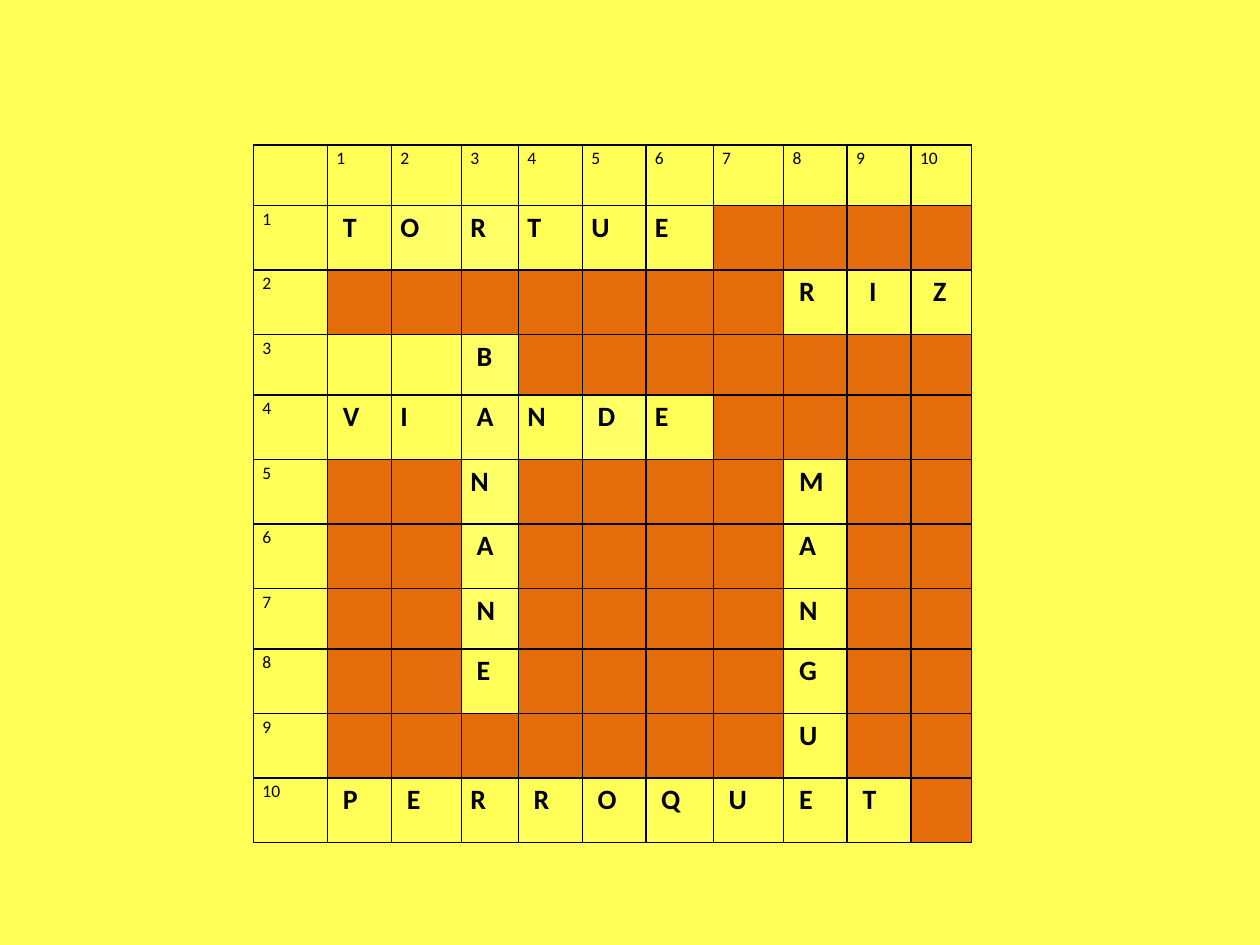
from lxml import etree
from pptx import Presentation
from pptx.dml.color import RGBColor
from pptx.oxml import ns
from pptx.util import Cm, Pt

THEME = {
    "page": "FFFF57", "highlight": "FFFF66", "blocked": "E46C0A", "ink": "000000",
    "font": "Calibri", "number size": 10, "letter size": 16, "border": 1,
}

# Crossword: "#" is a blocked square, "." an empty one
GRID = [
    "TORTUE####",
    "#######RIZ",
    "..B#######",
    "VIANDE####",
    "##N####M##",
    "##A####A##",
    "##N####N##",
    "##E####G##",
    "#######U##",
    "PERROQUET#",
]
COLUMN_WIDTHS = [1.49, 1.29, 1.41, 1.15, 1.29, 1.28, 1.36, 1.42, 1.28, 1.29, 1.22]
TALL_ROW, SHORT_ROW = 1.3, 1.22
SHORT_ROWS = {0, 3, 7}
MARGIN, INDENT = 0.18, 0.13

# Squares by (row, column); letters are indented once unless listed here
FLUSH = {(1, 2), (1, 3), (1, 4), (1, 5), (1, 6), (4, 2), (4, 4), (4, 6), (5, 3), (10, 3)}
DOUBLE_INDENT = {(2, 9), (2, 10)}
HIGHLIGHTED = {(1, 2), (1, 3), (3, 3), (4, 3), (4, 5), (5, 3), (6, 3), (7, 3)}


def add_borders(cell):
    properties = cell._tc.get_or_add_tcPr()
    for side in ("a:lnL", "a:lnR", "a:lnT", "a:lnB"):
        line = etree.SubElement(properties, ns.qn(side), w=str(Pt(THEME["border"])))
        fill = etree.SubElement(line, ns.qn("a:solidFill"))
        etree.SubElement(fill, ns.qn("a:srgbClr"), val=THEME["ink"])


def write(cell, words, size, bold, indent):
    cell.margin_left = Cm(MARGIN + indent * INDENT)
    para = cell.text_frame.paragraphs[0]
    para.text = words
    para.line_spacing = 1.15
    para.font.name = THEME["font"]
    para.font.size = Pt(size)
    para.font.bold = bold
    para.font.color.rgb = RGBColor.from_string(THEME["ink"])


# Page
deck = Presentation()
deck.slide_width, deck.slide_height = Cm(25.4), Cm(19.05)
page = deck.slides.add_slide(deck.slide_layouts[6])
page.background.fill.solid()
page.background.fill.fore_color.rgb = RGBColor.from_string(THEME["page"])

# Table frame
row_heights = [SHORT_ROW if row in SHORT_ROWS else TALL_ROW for row in range(len(GRID) + 1)]
table = page.shapes.add_table(
    len(row_heights), len(COLUMN_WIDTHS), Cm(5.11), Cm(2.92),
    Cm(sum(COLUMN_WIDTHS)), Cm(sum(row_heights))).table
table.first_row = table.horz_banding = False
for column, width in zip(table.columns, COLUMN_WIDTHS):
    column.width = Cm(width)
for table_row, height in zip(table.rows, row_heights):
    table_row.height = Cm(height)

# Squares
for row in range(len(row_heights)):
    for column in range(len(COLUMN_WIDTHS)):
        cell = table.cell(row, column)
        square = (row, column)
        cell.margin_left = cell.margin_right = Cm(MARGIN)
        cell.margin_top = cell.margin_bottom = 0
        add_borders(cell)
        cell.fill.background()

        # Row and column numbers
        if row == 0 or column == 0:
            if row or column:
                write(cell, str(row or column), THEME["number size"], False, 0)
            continue

        # Letters and blocked squares
        mark = GRID[row - 1][column - 1]
        if mark.isalpha():
            indent = 0 if square in FLUSH else 2 if square in DOUBLE_INDENT else 1
            write(cell, mark, THEME["letter size"], True, indent)
        colour = "blocked" if mark == "#" else "highlight" if square in HIGHLIGHTED else None
        if colour:
            cell.fill.solid()
            cell.fill.fore_color.rgb = RGBColor.from_string(THEME[colour])

deck.save("out.pptx")
